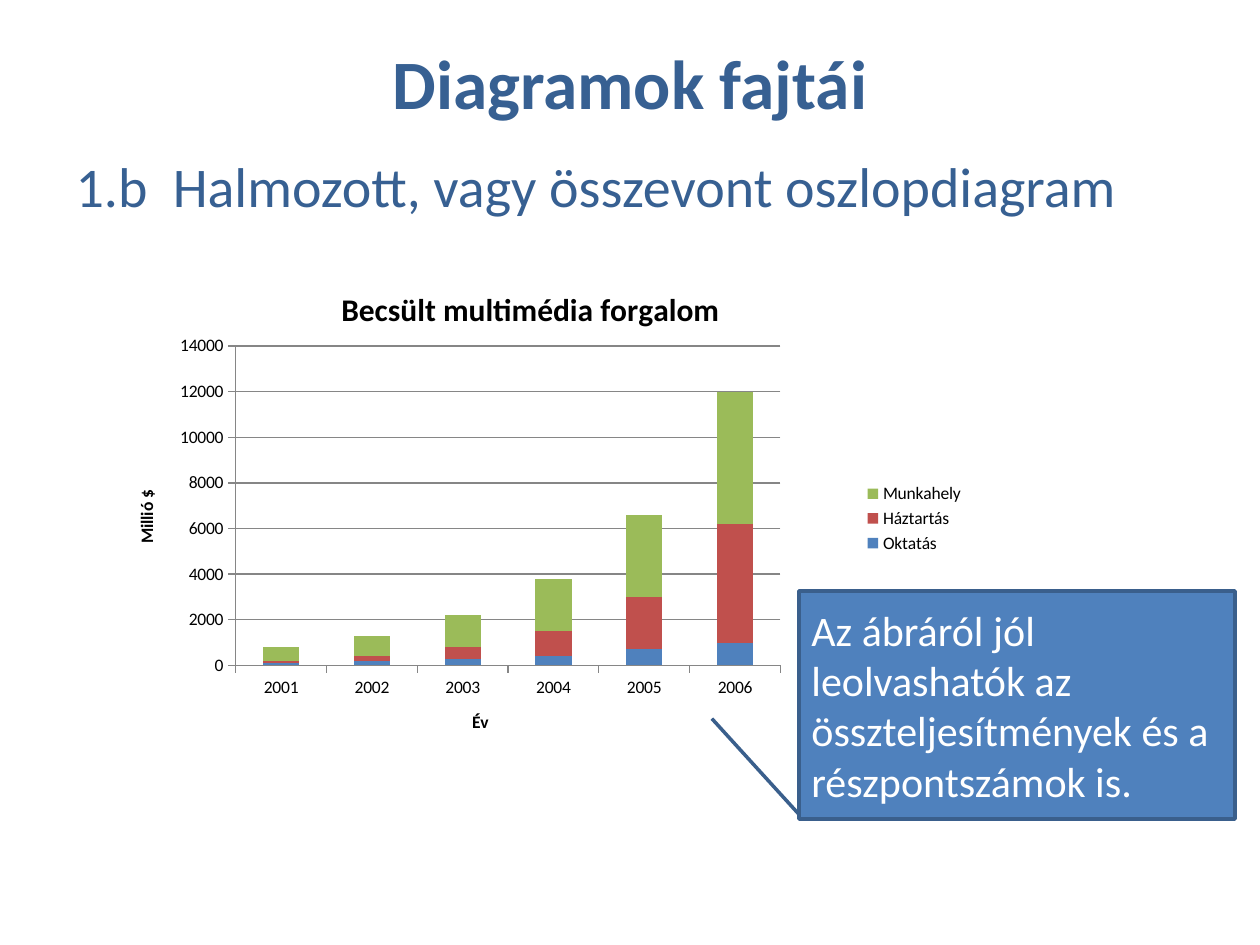
"""Builds a slide about stacked column charts."""
import pptx
import pptx.chart.data
import pptx.dml.color
import pptx.enum.chart
import pptx.enum.shapes
import pptx.enum.text
import pptx.oxml
import pptx.oxml.ns
import pptx.util

HUES = {
    "title": "376092",
    "blue": "4F81BD",
    "red": "C0504D",
    "green": "9BBB59",
    "edge": "3A5F8C",
    "grid": "868686",
    "black": "000000",
    "white": "FFFFFF",
}
YEARS = ["2001", "2002", "2003", "2004", "2005", "2006"]
SALES = [
    ("Oktatás", "blue", [100, 200, 300, 400, 700, 1000]),
    ("Háztartás", "red", [100, 200, 500, 1100, 2300, 5200]),
    ("Munkahely", "green", [600, 900, 1400, 2300, 3600, 5800]),
]
PLOT = {"x": 0.17, "y": 0.16, "w": 0.61, "h": 0.63}


class Deck:
    face = "Calibri"
    scale = 914400 / 126

    def __init__(self):
        self.file = pptx.Presentation()
        self.file.slide_width, self.file.slide_height = self.px(1260, 945)
        self.slide = self.file.slides.add_slide(self.file.slide_layouts[1])

    def px(self, *sizes):
        return [pptx.util.Emu(round(n * self.scale)) for n in sizes]

    def hue(self, name):
        return pptx.dml.color.RGBColor.from_string(HUES[name])

    def style(self, font, size, hue, bold=False):
        font.name = self.face
        font.size = pptx.util.Pt(size)
        font.bold = bold
        font.color.rgb = self.hue(hue)

    def words(self, frame, text, size, hue, bold=False, align="LEFT"):
        frame.word_wrap = True
        frame.auto_size = pptx.enum.text.MSO_AUTO_SIZE.NONE
        para = frame.paragraphs[0]
        para.alignment = getattr(pptx.enum.text.PP_ALIGN, align)
        para.space_before = pptx.util.Pt(0)
        run = para.add_run()
        run.text = text
        self.style(run.font, size, hue, bold)
        return para

    def place(self, shape, box):
        shape.left, shape.top, shape.width, shape.height = self.px(*box)

    def title(self, text, box):
        shape = self.slide.shapes.title
        self.place(shape, box)
        shape.text_frame.vertical_anchor = pptx.enum.text.MSO_ANCHOR.MIDDLE
        self.words(shape.text_frame, text, 39.6, "title", True, "CENTER")

    def body(self, text, box):
        shape = self.slide.placeholders[1]
        self.place(shape, box)
        para = self.words(shape.text_frame, text, 32, "title")
        props = para._p.get_or_add_pPr()
        props.set("marL", "0")
        props.set("indent", "0")
        space = "http://schemas.openxmlformats.org/drawingml/2006/main"
        props.append(pptx.oxml.parse_xml(f'<a:buNone xmlns:a="{space}"/>'))

    def callout(self, text, box, tail):
        kind = pptx.enum.shapes.MSO_SHAPE.LINE_CALLOUT_1
        shape = self.slide.shapes.add_shape(kind, *self.px(*box))
        for i, value in enumerate(tail):
            shape.adjustments[i] = value
        shape.shadow.inherit = False
        shape.fill.solid()
        shape.fill.fore_color.rgb = self.hue("blue")
        shape.line.color.rgb = self.hue("edge")
        shape.line.width = pptx.util.Pt(2)
        shape.text_frame.vertical_anchor = pptx.enum.text.MSO_ANCHOR.MIDDLE
        self.words(shape.text_frame, text, 24, "white")

    def label(self, owner, text, size):
        run = owner.text_frame.paragraphs[0].add_run()
        run.text = text
        self.style(run.font, size, "black", True)

    def axis(self, axis, text):
        self.label(axis.axis_title, text, 10)
        axis.major_tick_mark = pptx.enum.chart.XL_TICK_MARK.OUTSIDE
        axis.minor_tick_mark = pptx.enum.chart.XL_TICK_MARK.NONE
        axis.format.line.color.rgb = self.hue("grid")
        self.style(axis.tick_labels.font, 10, "black")

    def layout(self, chart):
        plot = chart._chartSpace.chart.plotArea
        for old in plot.findall(pptx.oxml.ns.qn("c:layout")):
            plot.remove(old)
        parts = '<c:layoutTarget val="inner"/>'
        parts += "".join(f'<c:{k}Mode val="edge"/>' for k in "xy")
        parts += "".join(f'<c:{k} val="{v}"/>' for k, v in PLOT.items())
        space = "http://schemas.openxmlformats.org/drawingml/2006/chart"
        plot.insert(0, pptx.oxml.parse_xml(
            f'<c:layout xmlns:c="{space}"><c:manualLayout>{parts}'
            "</c:manualLayout></c:layout>"))

    def chart(self, title, names, box):
        data = pptx.chart.data.CategoryChartData()
        data.categories = YEARS
        for name, _, sums in SALES:
            data.add_series(name, sums)
        kind = pptx.enum.chart.XL_CHART_TYPE.COLUMN_STACKED
        chart = self.slide.shapes.add_chart(kind, *self.px(*box), data).chart
        self.style(chart.font, 10, "black")
        chart.has_title = True
        self.label(chart.chart_title, title, 18)
        chart.has_legend = True
        chart.legend.position = pptx.enum.chart.XL_LEGEND_POSITION.RIGHT
        chart.legend.include_in_layout = False
        self.style(chart.legend.font, 10, "black")
        for axis, name in zip((chart.category_axis, chart.value_axis), names):
            self.axis(axis, name)
        chart.value_axis.minimum_scale = 0
        chart.value_axis.maximum_scale = 14000
        chart.value_axis.major_unit = 2000
        chart.value_axis.major_gridlines.format.line.color.rgb = self.hue("grid")
        plot = chart.plots[0]
        plot.gap_width = 150
        plot.overlap = 100
        plot.vary_by_categories = False
        for bars, (_, hue, _) in zip(plot.series, SALES):
            bars.format.fill.solid()
            bars.format.fill.fore_color.rgb = self.hue(hue)
        self.layout(chart)


def main():
    deck = Deck()
    deck.title("Diagramok fajtái", (63, 38, 1134, 87))
    deck.body("1.b  Halmozott, vagy összevont oszlopdiagram",
              (63, 145, 1134, 699))
    deck.callout("Az ábráról jól leolvashatók az összteljesítmények "
                 "és a részpontszámok is.",
                 (799, 591, 436, 228), (0.98, 0, 0.56, -0.2))
    deck.chart("Becsült multimédia forgalom", ("Év", "Millió $"),
               (84, 265, 893, 507))
    deck.file.save("out.pptx")


if __name__ == "__main__":
    main()
